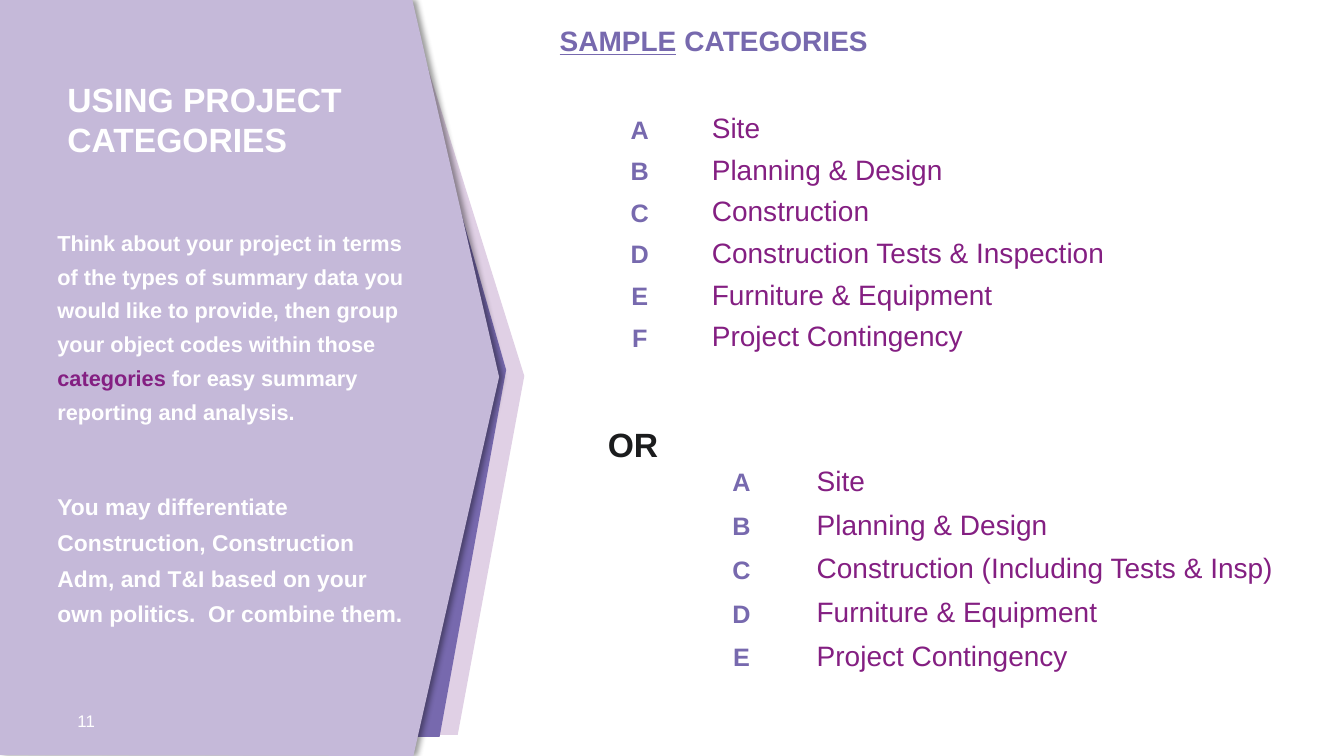
from lxml import etree
from pptx import Presentation
from pptx.dml.color import RGBColor
from pptx.enum.text import MSO_ANCHOR, MSO_AUTO_SIZE, PP_ALIGN
from pptx.oxml.ns import qn
from pptx.util import Pt

PX = 9144
TOP, MIDDLE, BOTTOM = MSO_ANCHOR.TOP, MSO_ANCHOR.MIDDLE, MSO_ANCHOR.BOTTOM
LEFT, CENTER = PP_ALIGN.LEFT, PP_ALIGN.CENTER
NO_AUTOFIT = MSO_AUTO_SIZE.NONE
TITLE_ONLY = 5

WHITE, INK = "FFFFFF", "1B1C1D"
PALE, LILAC, VIOLET, PURPLE = "E0D0E5", "C5B9D9", "7769AE", "841F82"


def px(length):
    return round(length * PX)


def colour(value):
    return RGBColor.from_string(value)


def apply(target, values):
    for name, value in values.items():
        setattr(target, name, value)


class SlideBuilder:
    font_name = "Arial"

    def __init__(self, presentation):
        self.slide = presentation.slides.add_slide(presentation.slide_layouts[TITLE_ONLY])
        self.shapes = self.slide.shapes

    def panel(self, points, fill, shadow=False):
        builder = self.shapes.build_freeform(*points[0], scale=PX)
        builder.add_line_segments(points[1:], close=True)
        shape = builder.convert_to_shape()
        shape.shadow.inherit = False
        shape.fill.solid()
        shape.fill.fore_color.rgb = colour(fill)
        shape.line.fill.background()
        if shadow:
            effects = shape._element.spPr.find(qn("a:effectLst"))
            outer = etree.SubElement(effects, qn("a:outerShdw"), blurRad=str(Pt(4)),
                                     dist=str(Pt(3)), dir="0", rotWithShape="0")
            black = etree.SubElement(outer, qn("a:srgbClr"), val="000000")
            etree.SubElement(black, qn("a:alpha"), val="40000")

    def run(self, paragraph, text, size, ink, **style):
        run = paragraph.add_run()
        run.text = text
        apply(run.font, {"name": self.font_name, "size": Pt(size), **style})
        run.font.color.rgb = colour(ink)

    def set_text(self, frame, paragraphs, anchor=TOP, inset=(10, 5)):
        side, edge = map(px, inset)
        apply(frame, {"word_wrap": True, "auto_size": NO_AUTOFIT, "vertical_anchor": anchor,
                      "margin_left": side, "margin_right": side,
                      "margin_top": edge, "margin_bottom": edge})
        for index, (runs, values) in enumerate(paragraphs):
            paragraph = frame.add_paragraph() if index else frame.paragraphs[0]
            apply(paragraph, {"alignment": LEFT, **values})
            for text, size, ink, style in runs:
                self.run(paragraph, text, size, ink, **style)

    def title(self, box, runs):
        title = self.shapes.title
        apply(title, dict(zip(("left", "top", "width", "height"), map(px, box))))
        self.set_text(title.text_frame, [(runs, {"line_spacing": 0.9})], inset=(0, 0))

    def text(self, box, paragraphs, **layout):
        shape = self.shapes.add_textbox(*map(px, box))
        self.set_text(shape.text_frame, paragraphs, **layout)

    def category_table(self, box, letter_width, categories):
        width, height = box[2:]
        table = self.shapes.add_table(len(categories), 2, *map(px, box)).table
        apply(table, {"first_row": False, "horz_banding": False})
        table.columns[0].width = px(letter_width)
        table.columns[1].width = px(width - letter_width)
        for row, category in enumerate(categories):
            table.rows[row].height = px(height / len(categories))
            letter = chr(ord("A") + row)
            self.cell(table.cell(row, 0), letter, 18, VIOLET, True, CENTER)
            self.cell(table.cell(row, 1), category, 20, PURPLE, False, LEFT)

    def cell(self, cell, text, size, ink, bold, alignment):
        cell.fill.background()
        apply(cell, {"vertical_anchor": BOTTOM, "margin_left": px(6), "margin_right": px(6),
                     "margin_top": px(5), "margin_bottom": px(5)})
        paragraph = cell.text_frame.paragraphs[0]
        paragraph.alignment = alignment
        properties = paragraph._p.get_or_add_pPr()
        properties.set("marL", str(px(51)))
        properties.set("indent", str(px(-51)))
        self.run(paragraph, text, size, ink, bold=bold)


def main():
    presentation = Presentation()
    presentation.slide_width = px(1333)
    presentation.slide_height = px(750)
    builder = SlideBuilder(presentation)
    bold = {"bold": True}

    builder.panel([(19, 70), (408, 15), (520, 373), (454, 729), (60, 729)], PALE)
    builder.panel([(0, 41), (401, 15), (502, 367), (436, 731), (46, 734)], VIOLET)
    builder.panel([(0, 0), (409, 0), (495, 374), (410, 750), (0, 749)], LILAC, shadow=True)

    builder.title((555, 27, 604, 74), [
        ("SAMPLE", 20, VIOLET, {"bold": True, "underline": True}),
        (" CATEGORIES", 20, VIOLET, {"bold": True, "underline": False}),
    ])
    builder.text((67, 695, 277, 40), [([("11", 12, WHITE, {})], {})], anchor=MIDDLE)
    builder.text((57, 73, 301, 91), [([("USING PROJECT CATEGORIES", 24, WHITE, bold)], {})])
    builder.text((57, 220, 354, 474), [
        ([("Think about your project in terms of the types of summary data you would like "
           "to provide, then group your object codes within those ", 15.5, WHITE, bold),
          ("categories", 15.5, PURPLE, bold),
          (" for easy summary reporting and analysis.", 15.5, WHITE, bold)],
         {"line_spacing": 1.3}),
        ([("You may differentiate Construction, Construction Adm, and T&I based on your own "
           "politics.  Or combine them.", 16.3, WHITE, bold)],
         {"line_spacing": 1.3, "space_before": Pt(43)}),
    ], inset=(0, 0))

    builder.category_table((569, 107, 604, 248), 131, [
        "Site", "Planning & Design", "Construction", "Construction Tests & Inspection",
        "Furniture & Equipment", "Project Contingency",
    ])
    builder.text((593, 416, 73, 50), [([("OR", 24, INK, bold)], {})])
    builder.category_table((667, 455, 644, 217), 137, [
        "Site", "Planning & Design", "Construction (Including Tests & Insp)",
        "Furniture & Equipment", "Project Contingency",
    ])
    presentation.save("out.pptx")


if __name__ == "__main__":
    main()
